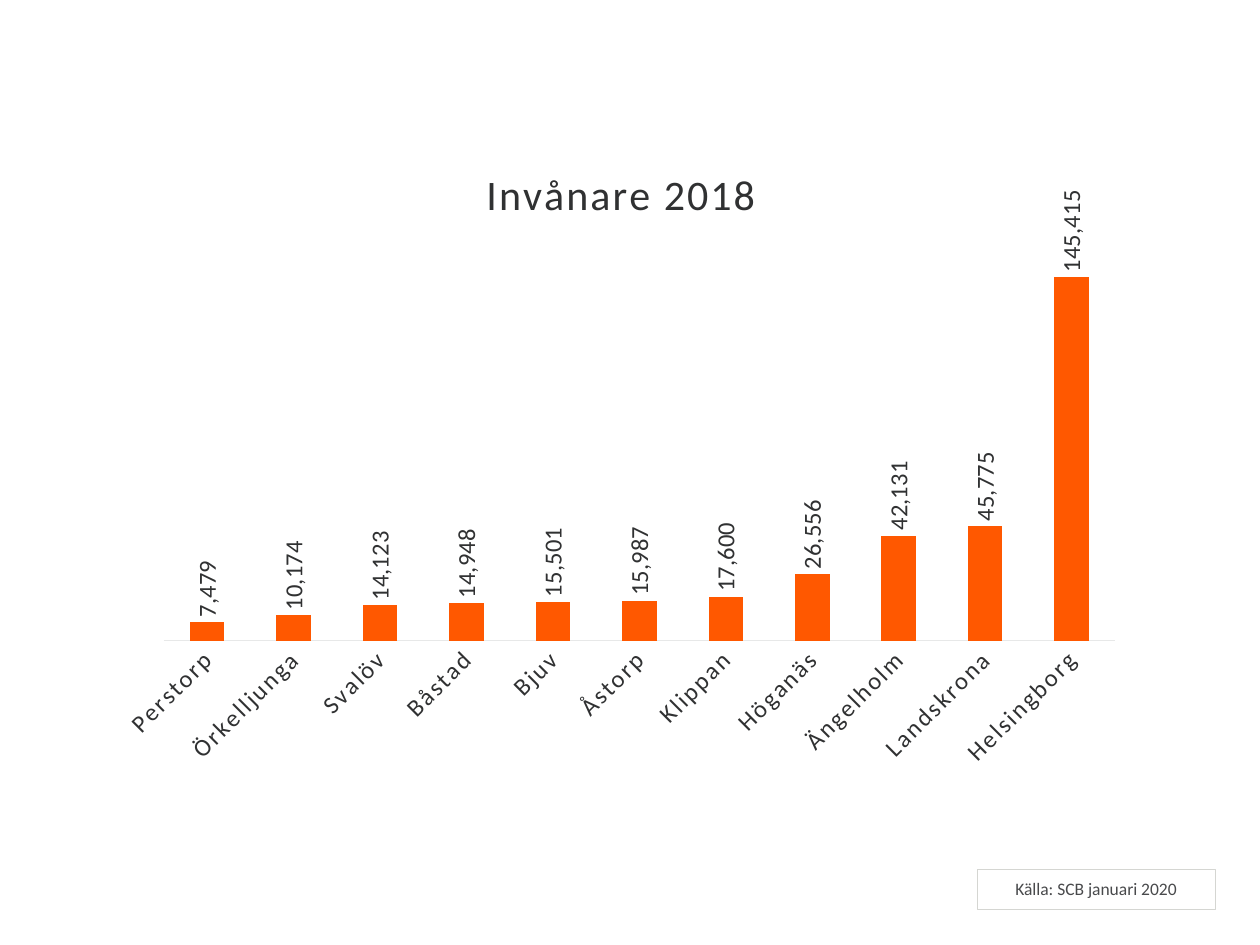
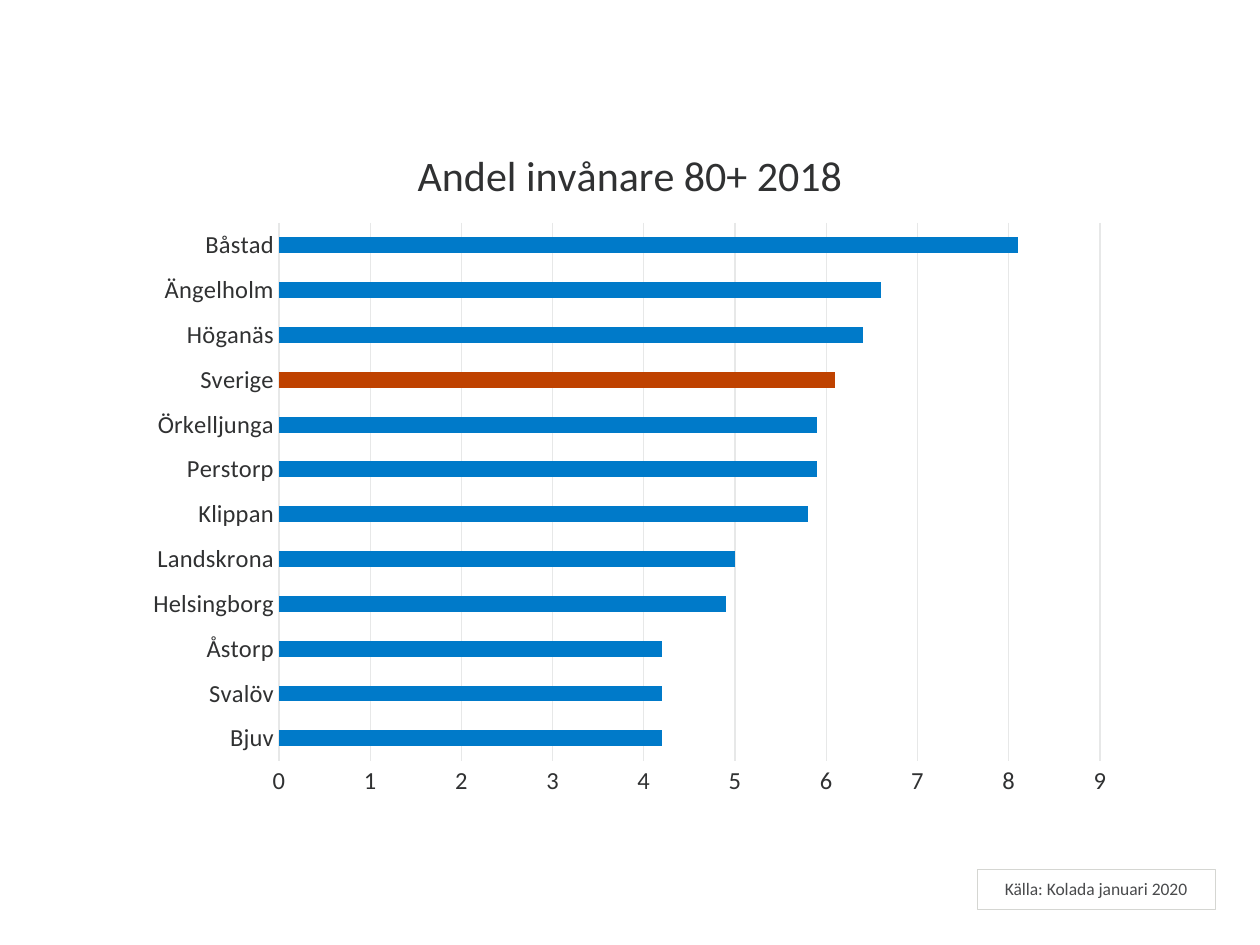
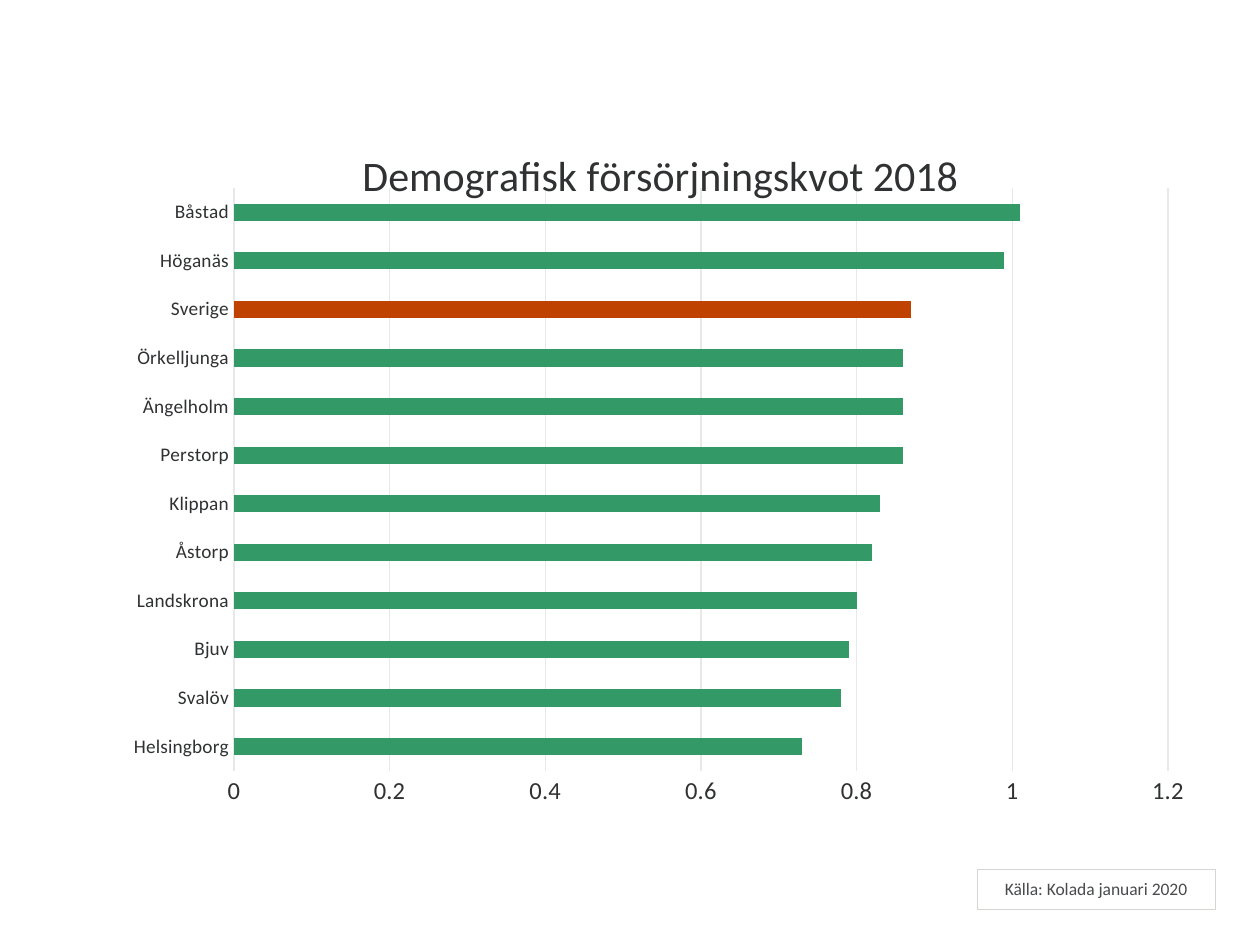
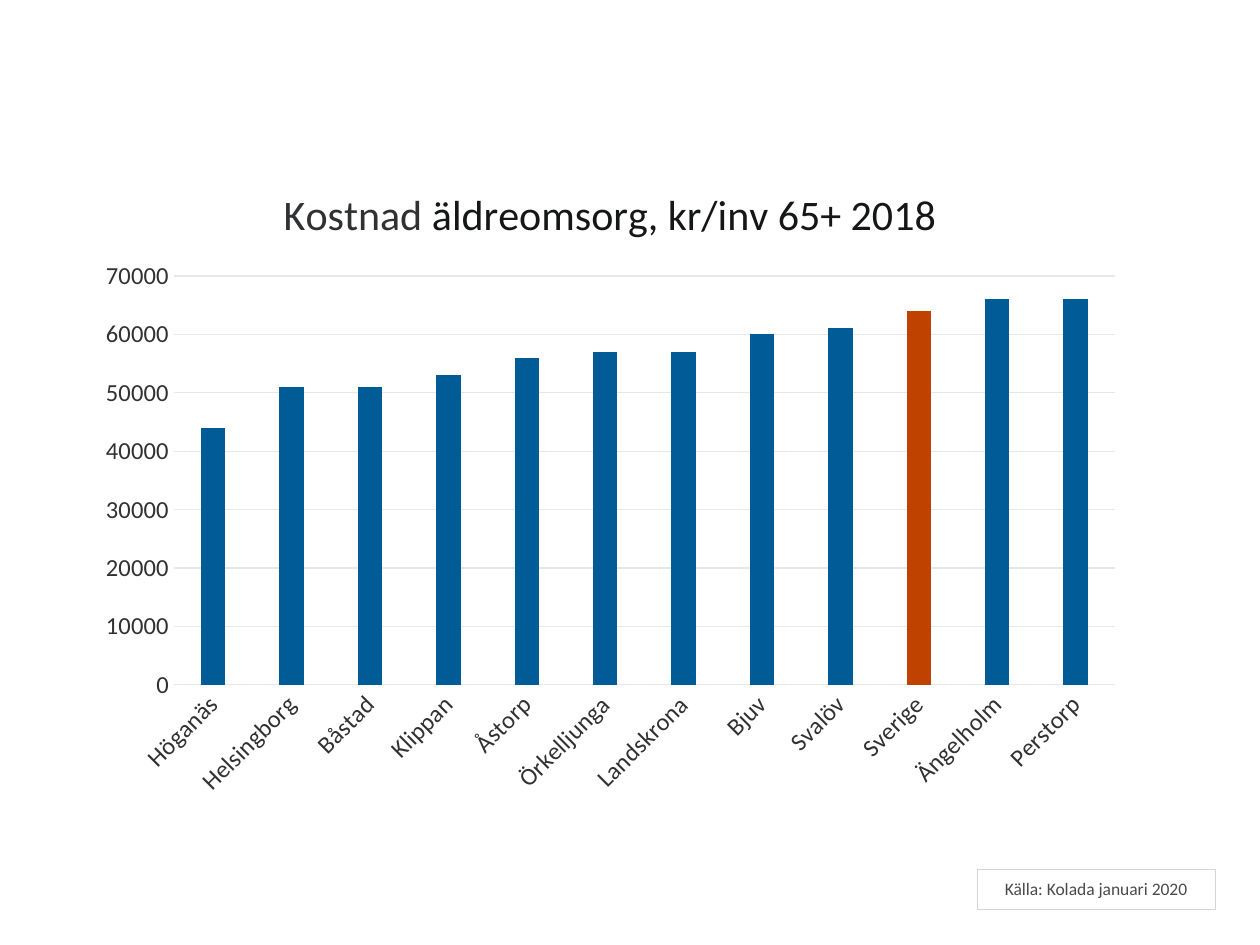
"""Build four slides of municipal bar charts with their sources."""
from dataclasses import dataclass
from typing import NamedTuple

from lxml.etree import SubElement
from pptx import Presentation
from pptx.chart.chart import Chart
from pptx.chart.data import CategoryChartData
from pptx.dml.color import RGBColor
from pptx.enum.chart import XL_CHART_TYPE, XL_LABEL_POSITION, XL_TICK_LABEL_POSITION, XL_TICK_MARK
from pptx.enum.shapes import MSO_SHAPE
from pptx.enum.text import MSO_ANCHOR, PP_ALIGN
from pptx.oxml.ns import qn
from pptx.slide import Slide
from pptx.util import Emu, Pt

PIXELS_PER_INCH = 126
FONT = "Calibri"
INK = "303132"
DARK_INK = "151616"
CHART_GRAY = "616365"
GRID_GRAY = "E7E8E8"
BORDER_GRAY = "D5D6D2"
SOURCE_GRAY = "494A4C"
COUNTRY = "Sverige"
COUNTRY_COLOR = "BF4200"
COLUMN = XL_CHART_TYPE.COLUMN_CLUSTERED
BAR = XL_CHART_TYPE.BAR_CLUSTERED


class Box(NamedTuple):
    left: int
    top: int
    width: int
    height: int


SOURCE_BOX = Box(977, 869, 238, 40)


class TitlePart(NamedTuple):
    text: str
    color: str = INK


YEAR = TitlePart("2018")


@dataclass
class ChartSlide:
    title: list[TitlePart]
    kind: XL_CHART_TYPE
    box: Box
    plot: Box
    color: str
    values: dict[str, float]
    gap: int
    overlap: int = 0
    source: str = "Källa: Kolada januari 2020"
    base_size: int = 10
    category_size: int = 14
    category_rotation: int = 0
    spacing: int = 0
    direct_labels: bool = False


CHART_SLIDES = [
    ChartSlide(
        [TitlePart("Invånare "), YEAR], COLUMN,
        Box(105, 145, 1032, 635), Box(164, 241, 951, 400), "FF5800",
        {"Perstorp": 7479, "Örkelljunga": 10174, "Svalöv": 14123, "Båstad": 14948,
         "Bjuv": 15501, "Åstorp": 15987, "Klippan": 17600, "Höganäs": 26556,
         "Ängelholm": 42131, "Landskrona": 45775, "Helsingborg": 145415},
        gap=150, overlap=-25, source="Källa: SCB januari 2020",
        category_rotation=-45, spacing=120, direct_labels=True),
    ChartSlide(
        [TitlePart("Andel invånare 80+ "), YEAR], BAR,
        Box(134, 125, 992, 684), Box(279, 223, 821, 538), "007AC9",
        {"Bjuv": 4.2, "Svalöv": 4.2, "Åstorp": 4.2, "Helsingborg": 4.9,
         "Landskrona": 5, "Klippan": 5.8, "Perstorp": 5.9, "Örkelljunga": 5.9,
         "Sverige": 6.1, "Höganäs": 6.4, "Ängelholm": 6.6, "Båstad": 8.1},
        gap=182),
    ChartSlide(
        [TitlePart("Demografisk försörjningskvot "), YEAR], BAR,
        Box(115, 125, 1091, 694), Box(234, 188, 934, 583), "339966",
        {"Helsingborg": 0.73, "Svalöv": 0.78, "Bjuv": 0.79, "Landskrona": 0.8,
         "Åstorp": 0.82, "Klippan": 0.83, "Perstorp": 0.86, "Ängelholm": 0.86,
         "Örkelljunga": 0.86, "Sverige": 0.87, "Höganäs": 0.99, "Båstad": 1.01},
        gap=182, base_size=9, category_size=11),
    ChartSlide(
        [TitlePart("Kostnad "), TitlePart("äldreomsorg, kr/inv 65+ 2018", DARK_INK)], COLUMN,
        Box(84, 165, 1052, 645), Box(174, 276, 941, 409), "005B97",
        {"Höganäs": 44000, "Helsingborg": 51000, "Båstad": 51000, "Klippan": 53000,
         "Åstorp": 56000, "Örkelljunga": 57000, "Landskrona": 57000, "Bjuv": 60000,
         "Svalöv": 61000, "Sverige": 64000, "Ängelholm": 66000, "Perstorp": 66000},
        gap=219, overlap=-27, category_rotation=-45),
]


def px(length: int) -> Emu:
    return Emu(round(length * 914400 / PIXELS_PER_INCH))


def place(box: Box) -> list[Emu]:
    return [px(length) for length in box]


def rgb(color: str) -> RGBColor:
    return RGBColor.from_string(color)


def format_font(font, *, size: int, color: str = INK) -> None:
    font.name = FONT
    font.size = Pt(size)
    font.bold = False
    font.color.rgb = rgb(color)


def add_run(paragraph, text: str, *, size: int, color: str, spacing: int = 0) -> None:
    run = paragraph.add_run()
    run.text = text
    format_font(run.font, size=size, color=color)
    if spacing:
        run.font._element.set("spc", str(spacing))


def format_line(line, color: str, width: float) -> None:
    line.color.rgb = rgb(color)
    line.width = Pt(width)


def turn_labels(element, degrees: int, spacing: int = 0) -> None:
    body = element.find(".//" + qn("a:bodyPr"))
    body.set("rot", str(degrees * 60000))
    body.set("vert", "horz")
    if spacing:
        element.find(".//" + qn("a:defRPr")).set("spc", str(spacing))


def place_plot(chart: Chart, box: Box, plot: Box) -> None:
    area = chart._chartSpace.find(".//" + qn("c:plotArea"))
    for existing in area.findall(qn("c:layout")):
        area.remove(existing)
    layout = SubElement(area, qn("c:layout"))
    area.insert(0, layout)
    manual = SubElement(layout, qn("c:manualLayout"))
    settings = {
        "layoutTarget": "inner", "xMode": "edge", "yMode": "edge",
        "x": (plot.left - box.left) / box.width,
        "y": (plot.top - box.top) / box.height,
        "w": plot.width / box.width,
        "h": plot.height / box.height,
    }
    for name, value in settings.items():
        SubElement(manual, qn(f"c:{name}")).set("val", str(value))


def format_axes(chart: Chart, content: ChartSlide) -> None:
    category_axis, value_axis = chart.category_axis, chart.value_axis
    for axis in (category_axis, value_axis):
        axis.major_tick_mark = axis.minor_tick_mark = XL_TICK_MARK.NONE
        axis.tick_label_position = XL_TICK_LABEL_POSITION.NEXT_TO_AXIS
    format_font(category_axis.tick_labels.font, size=content.category_size)
    format_line(category_axis.format.line, GRID_GRAY, 0.75)
    if content.category_rotation:
        turn_labels(category_axis._element, content.category_rotation, content.spacing)
    value_axis.has_major_gridlines = not content.direct_labels
    if content.direct_labels:
        value_axis.visible = False
        return
    format_font(value_axis.tick_labels.font, size=14)
    value_axis.format.line.fill.background()
    format_line(value_axis.major_gridlines.format.line, GRID_GRAY, 0.75)


def format_series(chart: Chart, content: ChartSlide) -> None:
    plot = chart.plots[0]
    plot.vary_by_categories = False
    plot.gap_width = content.gap
    plot.overlap = content.overlap
    series = plot.series[0]
    series.invert_if_negative = False
    series.format.fill.solid()
    series.format.fill.fore_color.rgb = rgb(content.color)
    if COUNTRY in content.values:
        fill = series.points[list(content.values).index(COUNTRY)].format.fill
        fill.solid()
        fill.fore_color.rgb = rgb(COUNTRY_COLOR)
    if content.direct_labels:
        labels = series.data_labels
        labels.show_value = True
        labels.number_format = "#,##0"
        labels.number_format_is_linked = False
        labels.position = XL_LABEL_POSITION.OUTSIDE_END
        format_font(labels.font, size=14)
        turn_labels(labels._element, -90)


def add_bar_chart(slide: Slide, content: ChartSlide) -> None:
    data = CategoryChartData(number_format="#,##0" if content.direct_labels else "General")
    data.categories = list(content.values)
    data.add_series("Series 1", list(content.values.values()))
    chart = slide.shapes.add_chart(content.kind, *place(content.box), data).chart
    chart.has_legend = False
    format_font(chart.font, size=content.base_size, color=CHART_GRAY)
    chart.has_title = True
    paragraph = chart.chart_title.text_frame.paragraphs[0]
    for part in content.title:
        add_run(paragraph, part.text, size=24, color=part.color, spacing=content.spacing)
    format_axes(chart, content)
    format_series(chart, content)
    place_plot(chart, content.box, content.plot)


def add_source(slide: Slide, text: str) -> None:
    shape = slide.shapes.add_shape(MSO_SHAPE.RECTANGLE, *place(SOURCE_BOX))
    shape.shadow.inherit = False
    shape.fill.background()
    format_line(shape.line, BORDER_GRAY, 0.25)
    shape.text_frame.word_wrap = True
    shape.text_frame.vertical_anchor = MSO_ANCHOR.MIDDLE
    paragraph = shape.text_frame.paragraphs[0]
    paragraph.alignment = PP_ALIGN.CENTER
    add_run(paragraph, text, size=10, color=SOURCE_GRAY)


def main() -> None:
    presentation = Presentation()
    presentation.slide_width, presentation.slide_height = px(1260), px(945)
    blank_layout = presentation.slide_layouts[6]
    for content in CHART_SLIDES:
        slide = presentation.slides.add_slide(blank_layout)
        add_bar_chart(slide, content)
        add_source(slide, content.source)
    presentation.save("out.pptx")


if __name__ == "__main__":
    main()
